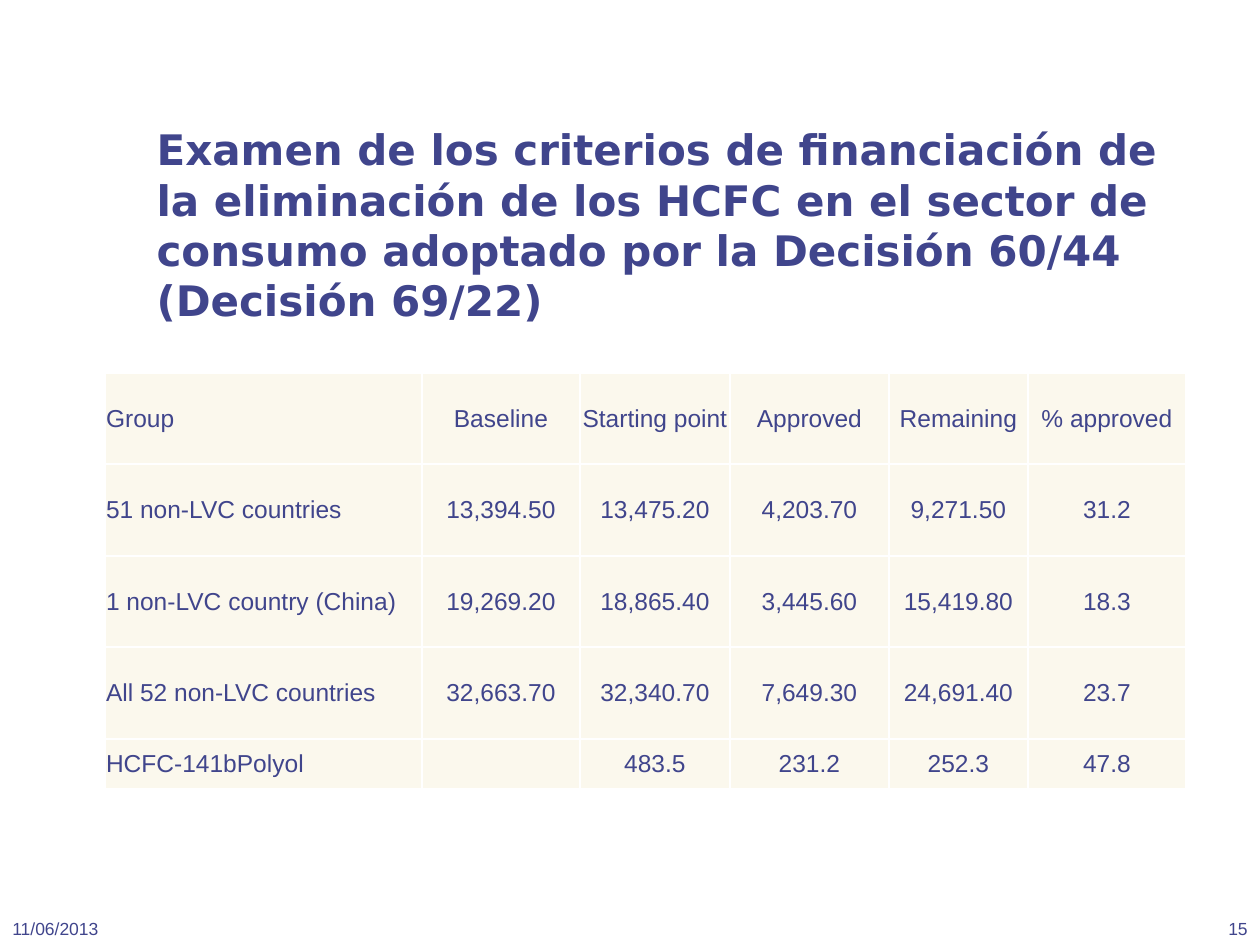
from pptx import Presentation
from pptx import util as u
from pptx.dml.color import RGBColor
from pptx.enum import text
from pptx.oxml import parse_xml
from pptx.oxml.ns import nsdecls

HUES = {"ink": "40458C", "cell": "FBF8ED", "rule": "FFFFFF"}
SCALE = 914400 / 126
LEFT, MID, RIGHT = text.PP_ALIGN.LEFT, text.PP_ALIGN.CENTER, text.PP_ALIGN.RIGHT

TITLE = ("Examen de los criterios de financiación de la eliminación de los HCFC "
         "en el sector de consumo adoptado por la Decisión 60/44 (Decisión 69/22)")
ROWS = [
    ["Group", "Baseline", "Starting point", "Approved", "Remaining", "% approved"],
    ["51 non-LVC countries", "13,394.50", "13,475.20", "4,203.70", "9,271.50", "31.2"],
    ["1 non-LVC country (China)", "19,269.20", "18,865.40", "3,445.60", "15,419.80", "18.3"],
    ["All 52 non-LVC countries", "32,663.70", "32,340.70", "7,649.30", "24,691.40", "23.7"],
    ["HCFC‑141bPolyol", "", "483.5", "231.2", "252.3", "47.8"],
]
WIDTHS = [317, 158, 150, 159, 139, 158]
HEIGHTS = [91, 92, 91, 92, 50]


def px(size):
    return u.Emu(round(size * SCALE))


class Deck:
    face = "Arial"

    def __init__(self, wide, high):
        self.file = Presentation()
        self.file.slide_width, self.file.slide_height = px(wide), px(high)
        self.slide = self.file.slides.add_slide(self.file.slide_layouts[5])

    def fill(self, frame, words, size, align=LEFT, face=None, bold=False):
        frame.text = words
        para = frame.paragraphs[0]
        para.alignment = align
        font = para.font
        font.name, font.size, font.bold = face or self.face, u.Pt(size), bold
        font.color.rgb = RGBColor.from_string(HUES["ink"])

    def title(self, words, box):
        shape = self.slide.shapes.title
        shape.left, shape.top, shape.width, shape.height = map(px, box)
        frame = shape.text_frame
        frame.word_wrap = True
        frame.auto_size = text.MSO_AUTO_SIZE.NONE
        frame.vertical_anchor = text.MSO_ANCHOR.MIDDLE
        self.fill(frame, words, 24, face="DejaVu Sans", bold=True)

    def label(self, words, box, align=LEFT):
        frame = self.slide.shapes.add_textbox(*map(px, box)).text_frame
        frame.word_wrap = True
        frame.vertical_anchor = text.MSO_ANCHOR.BOTTOM
        self.fill(frame, words, 10, align)

    def edge(self, cell):
        props = cell._tc.get_or_add_tcPr()
        for side in ("lnL", "lnR", "lnT", "lnB"):
            props.append(parse_xml(
                f'<a:{side} {nsdecls("a")} w="{u.Pt(1)}"><a:solidFill>'
                f'<a:srgbClr val="{HUES["rule"]}"/></a:solidFill></a:{side}>'))

    def table(self, rows, left, top, widths, heights):
        size = map(px, (left, top, sum(widths), sum(heights)))
        grid = self.slide.shapes.add_table(len(rows), len(widths), *size).table
        grid.horz_banding = False
        for col, width in zip(grid.columns, widths):
            col.width = px(width)
        for row, high, words in zip(grid.rows, heights, rows):
            row.height = px(high)
            for spot, (cell, word) in enumerate(zip(row.cells, words)):
                self.edge(cell)
                cell.fill.solid()
                cell.fill.fore_color.rgb = RGBColor.from_string(HUES["cell"])
                cell.margin_left = cell.margin_right = cell.margin_top = px(1)
                cell.margin_bottom = 0
                cell.vertical_anchor = text.MSO_ANCHOR.MIDDLE
                self.fill(cell.text_frame, word, 14, MID if spot else LEFT)


def main():
    deck = Deck(1260, 945)
    deck.title(TITLE, (144, 155, 1071, 139))
    deck.label("11/06/2013", (0, 882, 262, 63))
    deck.label("15", (1155, 882, 105, 63), RIGHT)
    deck.table(ROWS, 105, 373, WIDTHS, HEIGHTS)
    deck.file.save("out.pptx")


if __name__ == "__main__":
    main()
